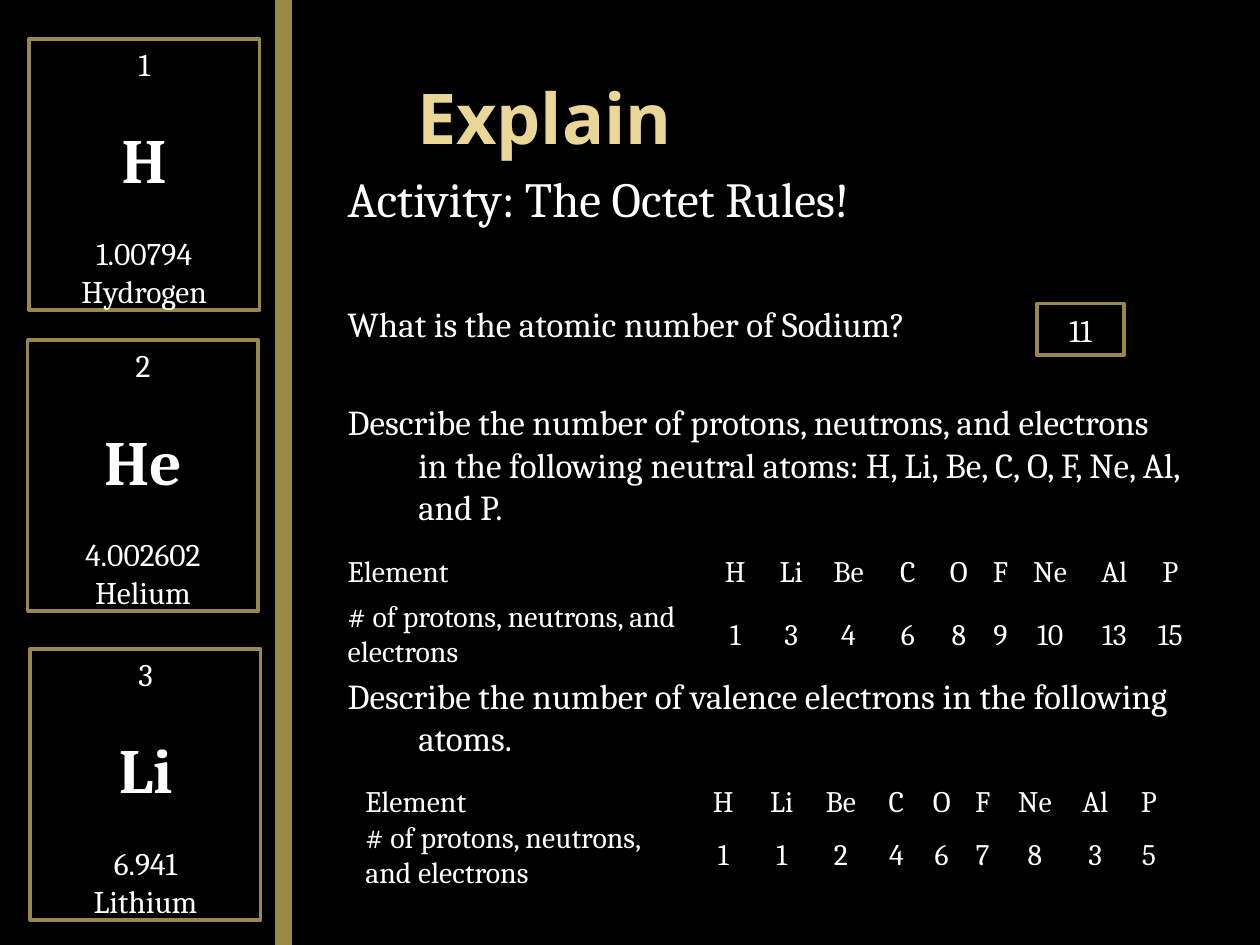
from dataclasses import dataclass

from lxml.etree import SubElement
from pptx import Presentation
from pptx.dml.color import RGBColor
from pptx.enum.shapes import MSO_CONNECTOR as Connector, MSO_SHAPE as Preset
from pptx.enum.text import MSO_ANCHOR as Anchor, MSO_AUTO_SIZE as AutoSize, PP_ALIGN as Align
from pptx.oxml.ns import qn
from pptx.util import Inches, Pt


@dataclass(frozen=True)
class Theme:
    background: RGBColor = RGBColor(0x00, 0x00, 0x00)
    text: RGBColor = RGBColor(0xFF, 0xFF, 0xFF)
    title: RGBColor = RGBColor(0xEA, 0xD6, 0x96)
    border: RGBColor = RGBColor(0x98, 0x89, 0x4B)
    divider: RGBColor = RGBColor(0x99, 0x89, 0x46)
    title_font: str = "Open Sans"
    body_font: str = "Cambria"
    title_size: int = 40
    heading_size: int = 28
    symbol_size: int = 36
    body_size: int = 20
    card_size: int = 18
    table_size: int = 17


@dataclass(frozen=True)
class Box:
    left: float
    top: float
    width: float
    height: float

    def lengths(self) -> tuple:
        return tuple(Inches(n) for n in (self.left, self.top, self.width, self.height))


@dataclass(frozen=True)
class Line:
    text: str
    size: int
    before: float = 0
    bold: bool = False
    margin: float = 0
    indent: float = 0


@dataclass(frozen=True)
class ElementCard:
    left: float
    top: float
    number: str
    symbol: str
    mass: str
    name: str


@dataclass(frozen=True)
class ElectronTable:
    box: Box
    columns: tuple
    rows: tuple
    counts: tuple


THEME = Theme()
SYMBOLS = ("H", "Li", "Be", "C", "O", "F", "Ne", "Al", "P")
NO_GRID_STYLE = "{2D5ABB26-0587-4C30-8999-92F81FD0307C}"

CARDS = (
    ElementCard(0.23, 0.31, "1", "H", "1.00794", "Hydrogen"),
    ElementCard(0.22, 2.7, "2", "He", "4.002602", "Helium"),
    ElementCard(0.24, 5.15, "3", "Li", "6.941", "Lithium"),
)

QUESTIONS = (
    Line("Activity: The Octet Rules!", THEME.heading_size, 5, margin=0.6, indent=-0.45),
    Line("What is the atomic number of Sodium?", THEME.body_size, 43, margin=0.71, indent=-0.56),
    Line("Describe the number of protons, neutrons, and electrons in the following "
         "neutral atoms: H, Li, Be, C, O, F, Ne, Al, and P.",
         THEME.body_size, 32, margin=0.71, indent=-0.56),
    Line("Describe the number of valence electrons in the following atoms.",
         THEME.body_size, 84, margin=0.71, indent=-0.56),
)

TABLES = (
    ElectronTable(Box(2.69, 4.33, 7, 0.96),
                  (2.89, 0.51, 0.38, 0.53, 0.41, 0.4, 0.26, 0.53, 0.49, 0.4, 0.2),
                  (0.44, 0.52), (1, 3, 4, 6, 8, 9, 10, 13, 15)),
    ElectronTable(Box(2.83, 6.23, 6.66, 0.85),
                  (2.68, 0.46, 0.47, 0.47, 0.41, 0.31, 0.34, 0.49, 0.47, 0.38, 0.19),
                  (0.28, 0.57), (1, 1, 2, 4, 6, 7, 8, 3, 5)),
)


def style_font(font, size: int, bold: bool = False, name: str = THEME.body_font,
               color: RGBColor = THEME.text) -> None:
    font.name, font.size, font.bold = name, Pt(size), bold
    font.color.rgb = color


def write_lines(frame, lines: tuple, align: Align) -> None:
    frame.word_wrap = True
    frame.auto_size = AutoSize.NONE
    for index, line in enumerate(lines):
        paragraph = frame.paragraphs[0] if index == 0 else frame.add_paragraph()
        paragraph.text = line.text
        paragraph.alignment = align
        paragraph.space_before = Pt(line.before)
        style_font(paragraph.font, line.size, line.bold)
        properties = paragraph._p.get_or_add_pPr()
        properties.set("marL", str(Inches(line.margin)))
        properties.set("indent", str(Inches(line.indent)))
        properties.insert_element_before(
            properties.makeelement(qn("a:buNone")), "a:tabLst", "a:defRPr", "a:extLst")


def place(shape, box: Box) -> None:
    shape.left, shape.top, shape.width, shape.height = box.lengths()


def add_frame(slide, box: Box, lines: tuple, anchor: Anchor) -> None:
    shape = slide.shapes.add_shape(Preset.RECTANGLE, *box.lengths())
    shape.shadow.inherit = False
    shape.fill.solid()
    shape.fill.fore_color.rgb = THEME.background
    shape.line.color.rgb = THEME.border
    shape.line.width = Pt(2)
    shape.text_frame.vertical_anchor = anchor
    write_lines(shape.text_frame, lines, Align.CENTER)


def add_card(slide, card: ElementCard) -> None:
    gap = THEME.card_size * 1.2
    lines = (
        Line(card.number, THEME.card_size),
        Line(card.symbol, THEME.symbol_size, gap, bold=True),
        Line(card.mass, THEME.card_size, gap),
        Line(card.name, THEME.card_size),
    )
    add_frame(slide, Box(card.left, card.top, 1.83, 2.15), lines, Anchor.TOP)


def add_electron_table(slide, data: ElectronTable) -> None:
    content = (
        ("Element", *SYMBOLS, ""),
        ("# of protons, neutrons, and electrons", *map(str, data.counts), ""),
    )
    table = slide.shapes.add_table(
        len(data.rows), len(data.columns), *data.box.lengths()).table
    table.first_row = table.horz_banding = False
    table._tbl.tblPr.find(qn("a:tableStyleId")).text = NO_GRID_STYLE
    for column, width in zip(table.columns, data.columns):
        column.width = Inches(width)
    for row, height, texts in zip(table.rows, data.rows, content):
        row.height = Inches(height)
        for index, (cell, text) in enumerate(zip(row.cells, texts)):
            cell.fill.solid()
            cell.fill.fore_color.rgb = THEME.background
            cell.vertical_anchor = Anchor.MIDDLE
            cell.margin_left = cell.margin_right = Inches(0.07)
            cell.margin_top = cell.margin_bottom = 0
            paragraph = cell.text_frame.paragraphs[0]
            paragraph.text = text
            paragraph.alignment = Align.CENTER if index else Align.LEFT
            style_font(paragraph.font, THEME.table_size)


def add_divider(slide) -> None:
    divider = slide.shapes.add_connector(
        Connector.STRAIGHT, Inches(2.25), 0, Inches(2.25), Inches(7.5))
    divider.line.color.rgb = THEME.divider
    divider.line.width = Pt(10)
    SubElement(divider._element.spPr, qn("a:effectLst"))


def main() -> None:
    presentation = Presentation()
    presentation.slide_width, presentation.slide_height = Inches(10), Inches(7.5)
    slide = presentation.slides.add_slide(presentation.slide_layouts[1])
    slide.background.fill.solid()
    slide.background.fill.fore_color.rgb = THEME.background

    title, body = slide.shapes.title, slide.placeholders[1]
    place(title, Box(2.49, 0.3, 7.51, 1.25))
    title.text_frame.vertical_anchor = Anchor.MIDDLE
    write_lines(title.text_frame, (Line("Explain", THEME.title_size, margin=0.72),), Align.LEFT)
    style_font(title.text_frame.paragraphs[0].font, THEME.title_size, True,
               THEME.title_font, THEME.title)
    place(body, Box(2.51, 1.29, 6.99, 5.15))
    write_lines(body.text_frame, QUESTIONS, Align.LEFT)

    for card in CARDS:
        add_card(slide, card)
    add_divider(slide)
    add_frame(slide, Box(8.23, 2.41, 0.69, 0.41),
              (Line("11", THEME.card_size),), Anchor.MIDDLE)
    for data in TABLES:
        add_electron_table(slide, data)
    presentation.save("out.pptx")


if __name__ == "__main__":
    main()
